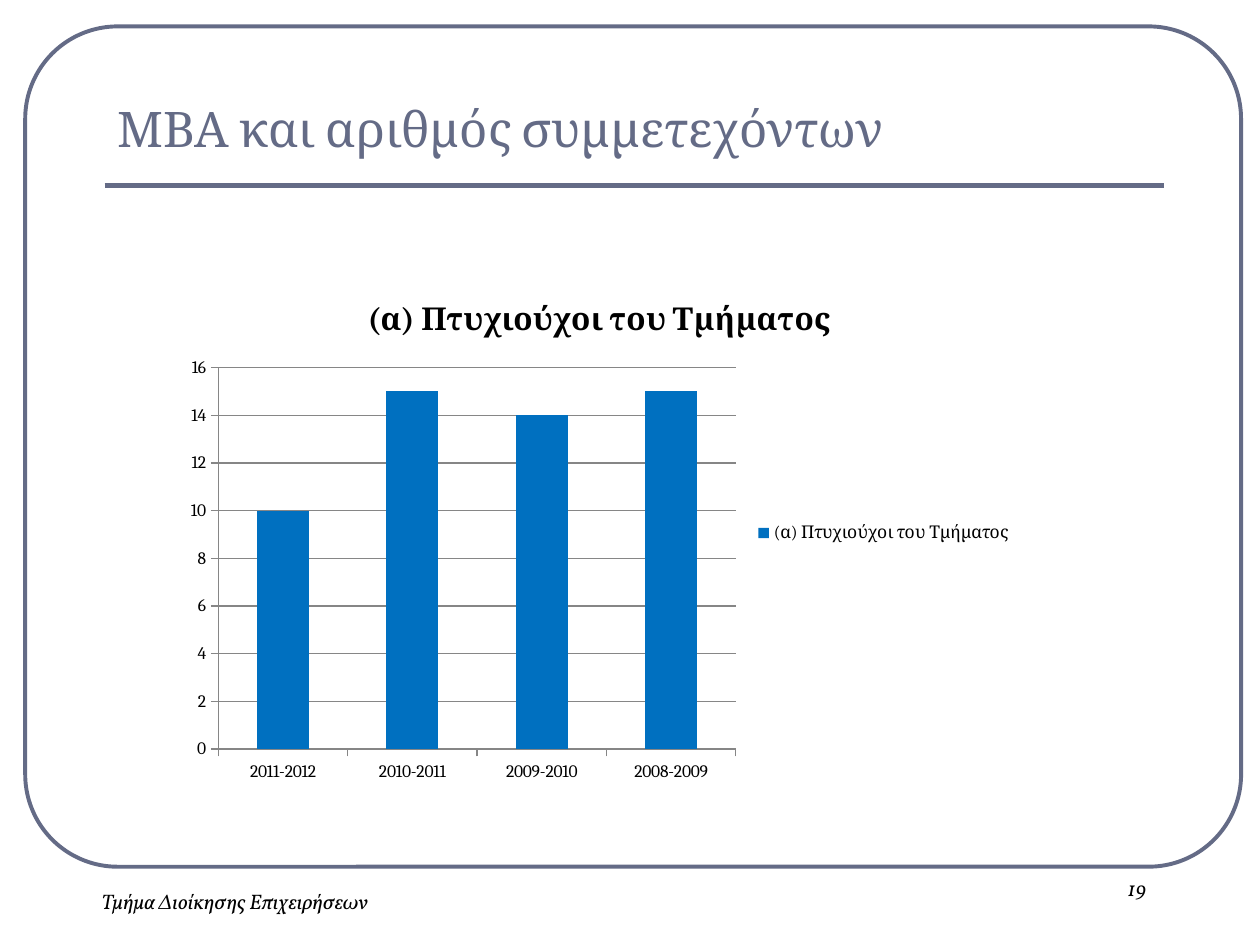
"""Builds a slide with a column chart of MBA participants per academic year."""
from lxml import etree
from pptx import Presentation
from pptx.chart.data import CategoryChartData
from pptx.dml.color import RGBColor
from pptx.enum.chart import XL_CHART_TYPE, XL_LEGEND_POSITION, XL_TICK_MARK
from pptx.enum.shapes import MSO_CONNECTOR, MSO_SHAPE
from pptx.enum.text import MSO_ANCHOR, PP_ALIGN
from pptx.oxml.ns import qn
from pptx.util import Pt

COLUMNS = XL_CHART_TYPE.COLUMN_CLUSTERED
LEGEND_RIGHT = XL_LEGEND_POSITION.RIGHT
TICK_OUT = XL_TICK_MARK.OUTSIDE
STRAIGHT = MSO_CONNECTOR.STRAIGHT
ROUNDED = MSO_SHAPE.ROUNDED_RECTANGLE
BOTTOM = MSO_ANCHOR.BOTTOM
LEFT, CENTER = PP_ALIGN.LEFT, PP_ALIGN.CENTER
TITLE_ONLY = 5

COLORS = {"slate": "646B86", "black": "000000", "blue": "0070C0", "gray": "868686"}


class SlideBuilder:
    """Holds the style and the current slide."""

    heading_font = "Cambria"
    footer_font = "Vollkorn"

    def __init__(self, presentation):
        self.slide = presentation.slides.add_slide(presentation.slide_layouts[TITLE_ONLY])
        self.shapes = self.slide.shapes

    def color(self, name):
        return RGBColor.from_string(COLORS[name])

    def style_font(self, font, name, size, color, bold=False, italic=False):
        font.name, font.size = name, Pt(size)
        font.bold, font.italic = bold, italic
        font.color.rgb = self.color(color)

    def style_line(self, line, color, width):
        line.color.rgb = self.color(color)
        line.width = Pt(width)

    def frame(self, left, top, width, height, rounding):
        border = self.shapes.add_shape(ROUNDED, Pt(left), Pt(top), Pt(width), Pt(height))
        border.adjustments[0] = rounding
        border.shadow.inherit = False
        border.fill.background()
        self.style_line(border.line, "slate", 2.25)

    def rule(self, left, right, y):
        underline = self.shapes.add_connector(STRAIGHT, Pt(left), Pt(y), Pt(right), Pt(y))
        self.style_line(underline.line, "slate", 3)
        etree.SubElement(underline._element.spPr, qn("a:effectLst"))

    def title(self, text, left, top, width, height):
        heading = self.shapes.title
        heading.left, heading.top = Pt(left), Pt(top)
        heading.width, heading.height = Pt(width), Pt(height)
        heading.text_frame.text = text
        heading.text_frame.vertical_anchor = BOTTOM
        paragraph = heading.text_frame.paragraphs[0]
        paragraph.alignment = LEFT
        self.style_font(paragraph.runs[0].font, self.heading_font, 28, "slate")

    def footer(self, text, left, top, width, height):
        note = self.shapes.add_textbox(Pt(left), Pt(top), Pt(width), Pt(height))
        note.text_frame.word_wrap = True
        note.text_frame.text = text
        paragraph = note.text_frame.paragraphs[0]
        paragraph.alignment = CENTER
        self.style_font(paragraph.runs[0].font, self.footer_font, 12, "black", italic=True)

    def column_chart(self, name, counts, left, top, width, height):
        data = CategoryChartData()
        data.categories = list(counts)
        data.add_series(name, list(counts.values()))
        chart = self.shapes.add_chart(
            COLUMNS, Pt(left), Pt(top), Pt(width), Pt(height), data
        ).chart
        self.style_font(chart.font, self.heading_font, 10, "black")

        chart.has_title = True
        chart.chart_title.text_frame.text = name
        chart.chart_title.include_in_layout = False
        title_run = chart.chart_title.text_frame.paragraphs[0].runs[0]
        self.style_font(title_run.font, self.heading_font, 18, "black", bold=True)

        chart.has_legend = True
        chart.legend.position = LEGEND_RIGHT
        chart.legend.include_in_layout = False

        for axis in (chart.category_axis, chart.value_axis):
            axis.major_tick_mark = TICK_OUT
            self.style_line(axis.format.line, "gray", 0.75)
        chart.value_axis.has_major_gridlines = True
        self.style_line(chart.value_axis.major_gridlines.format.line, "gray", 0.75)

        plot = chart.plots[0]
        plot.gap_width = 150
        plot.vary_by_categories = False
        bars = plot.series[0].format.fill
        bars.solid()
        bars.fore_color.rgb = self.color("blue")


def main():
    presentation = Presentation()
    presentation.slide_width, presentation.slide_height = Pt(720), Pt(540)
    builder = SlideBuilder(presentation)
    builder.frame(14.4, 15.1, 694.8, 480.2, 0.11)
    builder.rule(59.8, 665.3, 105.8)
    builder.title("ΜΒΑ και αριθμός συμμετεχόντων", 59.8, 25.9, 606.2, 67.7)
    builder.footer("Τμήμα Διοίκησης Επιχειρήσεων", 20.2, 504, 228.2, 36)
    builder.footer("19", 586.8, 496.8, 126, 36)
    participants = {"2011-2012": 10, "2010-2011": 15, "2009-2010": 14, "2008-2009": 15}
    builder.column_chart(
        "(α) Πτυχιούχοι του Τμήματος", participants, 99.4, 157, 486, 295.2
    )
    presentation.save("out.pptx")


if __name__ == "__main__":
    main()
